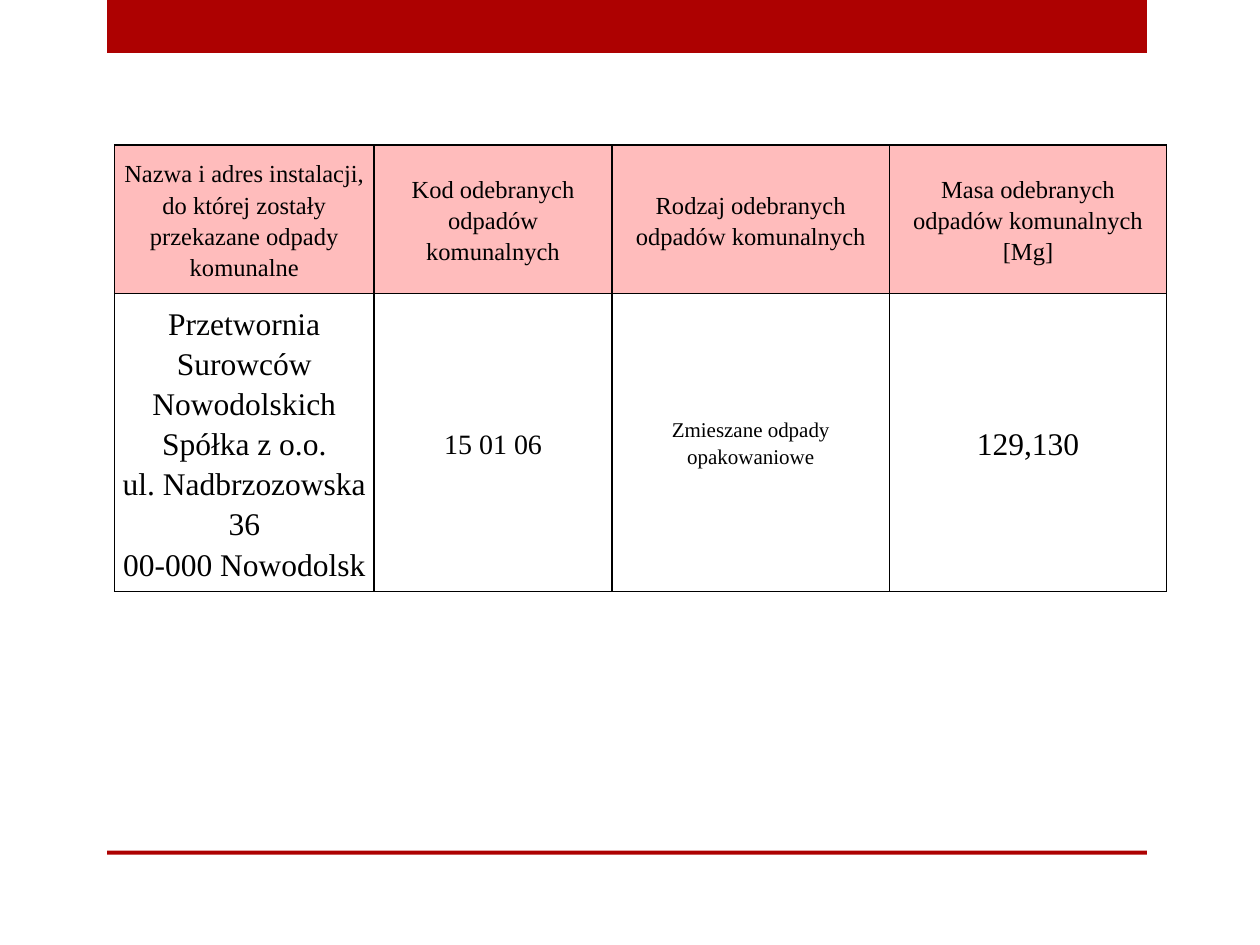
from lxml import etree
from pptx import Presentation
from pptx.dml.color import RGBColor
from pptx.enum.shapes import MSO_SHAPE as Shape
from pptx.enum.text import MSO_ANCHOR as Anchor, PP_ALIGN as Align
from pptx.oxml.ns import qn
from pptx.util import Cm, Pt


def color(code):
    return RGBColor.from_string(code)


class Deck:
    font = "Times New Roman"
    red, pink, black = "AD0101", "FFBCBC", "000000"

    def __init__(self, prs):
        self.s = prs.slides.add_slide(prs.slide_layouts[6])

    def bar(self, x, y, w, h):
        sp = self.s.shapes.add_shape(Shape.RECTANGLE, Cm(x), Cm(y), Cm(w), Cm(h))
        sp.shadow.inherit = False
        sp.fill.solid()
        sp.fill.fore_color.rgb = color(self.red)
        sp.line.fill.background()

    def table(self, x, y, widths, heights, rows):
        frame = self.s.shapes.add_table(len(heights), len(widths), Cm(x), Cm(y),
                                        Cm(sum(widths)), Cm(sum(heights)))
        tbl = frame.table
        tbl.first_row = tbl.horz_banding = False
        for col, w in zip(tbl.columns, widths):
            col.width = Cm(w)
        for row, h in zip(tbl.rows, heights):
            row.height = Cm(h)
        for i, row in enumerate(rows):
            for j, (size, paragraphs) in enumerate(row):
                self.cell(tbl.cell(i, j), size, paragraphs, self.pink if i == 0 else None)

    def cell(self, cell, size, paragraphs, fill):
        cell.vertical_anchor = Anchor.MIDDLE
        cell.margin_left = cell.margin_right = Cm(0.13)
        cell.margin_top = cell.margin_bottom = 0
        self.borders(cell)
        if fill:
            cell.fill.solid()
            cell.fill.fore_color.rgb = color(fill)
        else:
            cell.fill.background()
        tf = cell.text_frame
        for n, lines in enumerate(paragraphs):
            p = tf.add_paragraph() if n else tf.paragraphs[0]
            p.alignment = Align.CENTER
            p.line_spacing = 1.15
            for m, line in enumerate(lines.split("\n")):
                if m:
                    p.add_line_break()
                r = p.add_run()
                r.text = line
                r.font.name = self.font
                r.font.size = Pt(size)
                r.font.color.rgb = color(self.black)

    def borders(self, cell):
        props = cell._tc.get_or_add_tcPr()
        for side in ("a:lnL", "a:lnR", "a:lnT", "a:lnB"):
            ln = etree.SubElement(props, qn(side), w=str(Pt(1)))
            solid = etree.SubElement(ln, qn("a:solidFill"))
            etree.SubElement(solid, qn("a:srgbClr"), val=self.black)


def main():
    prs = Presentation()
    prs.slide_width, prs.slide_height = Cm(25.4), Cm(19.05)
    deck = Deck(prs)

    # Top band and bottom rule
    deck.bar(2.16, 0, 20.96, 1.07)
    deck.bar(2.16, 17.15, 20.96, 0.08)

    # Waste table: each cell is a text size and its paragraphs
    header = [
        (14, ["Nazwa i adres instalacji,\ndo której zostały przekazane odpady komunalne"]),
        (14, ["Kod odebranych odpadów komunalnych"]),
        (14, ["Rodzaj odebranych odpadów komunalnych"]),
        (14, ["Masa odebranych odpadów komunalnych", "[Mg]"]),
    ]
    waste = [
        (18, ["Przetwornia Surowców Nowodolskich\nSpółka z o.o.\nul. Nadbrzozowska 36",
              "00-000 Nowodolsk"]),
        (16, ["15 01 06"]),
        (12, ["Zmieszane odpady opakowaniowe"]),
        (18, ["129,130"]),
    ]
    deck.table(2.31, 2.92, [5.23, 4.8, 5.59, 5.59], [3, 6], [header, waste])

    prs.save("out.pptx")


if __name__ == "__main__":
    main()
